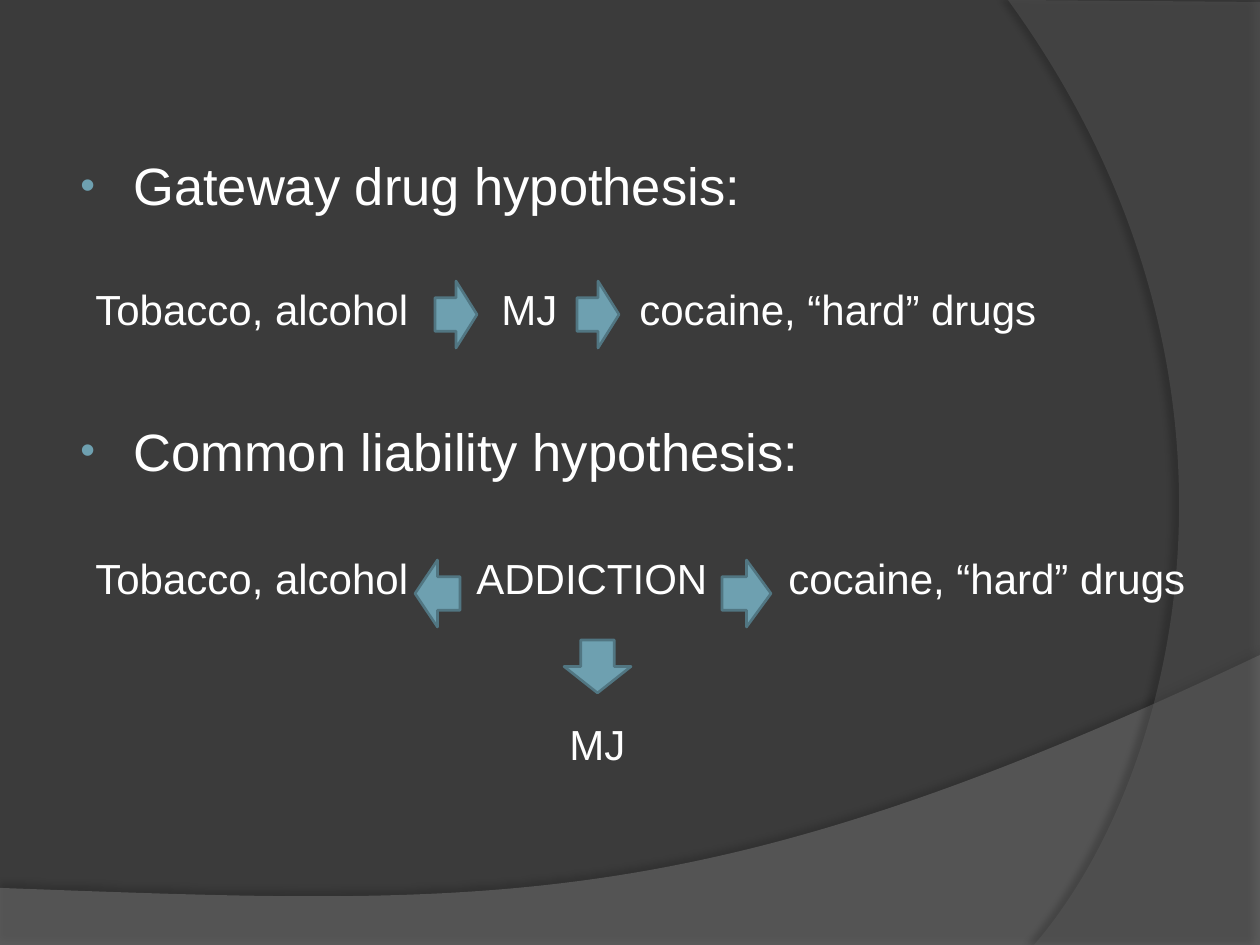
from lxml.etree import SubElement
from pptx import Presentation
from pptx.dml.color import RGBColor
from pptx.enum.shapes import MSO_SHAPE as Shape
from pptx.enum.text import MSO_ANCHOR, PP_ALIGN
from pptx.oxml.ns import qn
from pptx.util import Emu, Pt

PX = 914400 / 126
BACKGROUND = RGBColor(0x3B, 0x3B, 0x3B)
LOWER_GREY = RGBColor(0x7F, 0x7F, 0x7F)
RIGHT_GREY = RGBColor(0x5E, 0x5E, 0x5E)
WHITE = RGBColor(0xFF, 0xFF, 0xFF)
TEAL = RGBColor(0x6E, 0xA0, 0xB0)
DARK_TEAL = RGBColor(0x51, 0x76, 0x82)
FONT = "Arial"
HEADING_SIZE, CHAIN_SIZE = 30, 24

# heading, gap above it, chain of terms, gap above it, left edge of each term
HYPOTHESES = [
    ("Gateway drug hypothesis:", 0,
     ["Tobacco, alcohol", "MJ", "cocaine, “hard” drugs"], 67, [20, 426, 564]),
    ("Common liability hypothesis:", 85,
     ["Tobacco, alcohol", "ADDICTION", "cocaine, “hard” drugs"], 71, [20, 401, 713]),
]
BODY_BOX = (63, 147, 1144, 624)
OUTCOME, OUTCOME_BOX = "MJ", (557, 712, 82, 63)

ARROWS = [
    (Shape.RIGHT_ARROW, (435, 281, 42, 67)),
    (Shape.RIGHT_ARROW, (577, 281, 42, 67)),
    (Shape.RIGHT_ARROW, (722, 560, 49, 67)),
    (Shape.LEFT_ARROW, (415, 560, 45, 67)),
    (Shape.DOWN_ARROW, (564, 640, 67, 53)),
]

# straight corners, Bezier curve from the last corner, colour, opacity %,
# then shadow opacity %, blur pt, distance pt and direction in degrees
SWOOPS = [
    ([(0, 888), (0, 946), (1260, 946), (1260, 655)],
     [(704, 919), (493, 906), (0, 888)], LOWER_GREY, 45, (35, 4, 3.5, 270)),
    ([(1260, 2), (1260, 945), (1034, 945)],
     [(1177, 780), (1283, 378), (1008, 0)], RIGHT_GREY, 40, (45, 4, 4, 180)),
]


def px(length):
    return Emu(round(length * PX))


def place(box):
    return [px(length) for length in box]


def set_alpha(color, percent):
    SubElement(color, qn("a:alpha"), val=str(percent * 1000))


def bend_last_side(properties, curve, origin):
    """Turn the last straight side of a freeform into a Bezier curve."""
    side = list(properties.iter(qn("a:lnTo")))[-1]
    side.tag = qn("a:cubicBezTo")
    for point in list(side):
        side.remove(point)
    for x, y in curve:
        SubElement(side, qn("a:pt"), x=str(x - origin[0]), y=str(y - origin[1]))


def add_swoop(shapes, corners, curve, color, opacity, shadow):
    outline = [*corners, curve[-1]]
    builder = shapes.build_freeform(*outline[0], scale=PX)
    builder.add_line_segments(outline[1:])
    swoop = builder.convert_to_shape()
    swoop.fill.solid()
    swoop.fill.fore_color.rgb = color
    swoop.line.fill.background()
    swoop.shadow.inherit = False
    properties = swoop.element.spPr
    bend_last_side(properties, curve, [min(axis) for axis in zip(*outline)])
    set_alpha(properties.find(f"{qn('a:solidFill')}/{qn('a:srgbClr')}"), opacity)
    strength, blur, distance, degrees = shadow
    outer = SubElement(properties.find(qn("a:effectLst")), qn("a:outerShdw"),
                       blurRad=str(Pt(blur)), dist=str(Pt(distance)),
                       dir=str(degrees * 60000), algn="ctr", rotWithShape="0")
    set_alpha(SubElement(outer, qn("a:srgbClr"), val="000000"), strength)


def add_arrow(shapes, kind, box):
    arrow = shapes.add_shape(kind, *place(box))
    arrow.shadow.inherit = False
    arrow.fill.solid()
    arrow.fill.fore_color.rgb = TEAL
    arrow.line.color.rgb = DARK_TEAL
    arrow.line.width = Pt(1.5)


def write(paragraph, text, size, gap=0):
    paragraph.text = text
    paragraph.space_before = px(gap)
    for run in paragraph.runs:
        run.font.name = FONT
        run.font.size = Pt(size)
        run.font.color.rgb = WHITE


def set_bullet(paragraph):
    properties = paragraph._p.get_or_add_pPr()
    properties.set("marL", str(px(58)))
    properties.set("indent", str(px(-53)))
    color = SubElement(properties, qn("a:buClr"))
    SubElement(color, qn("a:srgbClr"), val=str(TEAL))
    SubElement(properties, qn("a:buSzPct"), val="80000")
    SubElement(properties, qn("a:buFont"), typeface=FONT)
    SubElement(properties, qn("a:buChar"), char="•")


def set_tabs(paragraph, stops):
    tabs = SubElement(paragraph._p.get_or_add_pPr(), qn("a:tabLst"))
    for stop in stops:
        SubElement(tabs, qn("a:tab"), pos=str(px(stop)), algn="l")


def add_hypotheses(shapes):
    frame = shapes.add_textbox(*place(BODY_BOX)).text_frame
    frame.word_wrap = True
    frame.vertical_anchor = MSO_ANCHOR.TOP
    for number, (heading, heading_gap, terms, chain_gap, stops) in enumerate(HYPOTHESES):
        title = frame.add_paragraph() if number else frame.paragraphs[0]
        write(title, heading, HEADING_SIZE, heading_gap)
        set_bullet(title)
        chain = frame.add_paragraph()
        write(chain, "".join("\t" + term for term in terms), CHAIN_SIZE, chain_gap)
        set_tabs(chain, stops)


def main():
    deck = Presentation()
    deck.slide_width, deck.slide_height = px(1260), px(945)
    slide = deck.slides.add_slide(deck.slide_layouts[6])
    slide.background.fill.solid()
    slide.background.fill.fore_color.rgb = BACKGROUND
    for swoop in SWOOPS:
        add_swoop(slide.shapes, *swoop)
    add_hypotheses(slide.shapes)
    for kind, box in ARROWS:
        add_arrow(slide.shapes, kind, box)
    outcome = slide.shapes.add_textbox(*place(OUTCOME_BOX)).text_frame
    outcome.word_wrap = False
    write(outcome.paragraphs[0], OUTCOME, CHAIN_SIZE)
    outcome.paragraphs[0].alignment = PP_ALIGN.LEFT
    deck.save("out.pptx")


if __name__ == "__main__":
    main()
